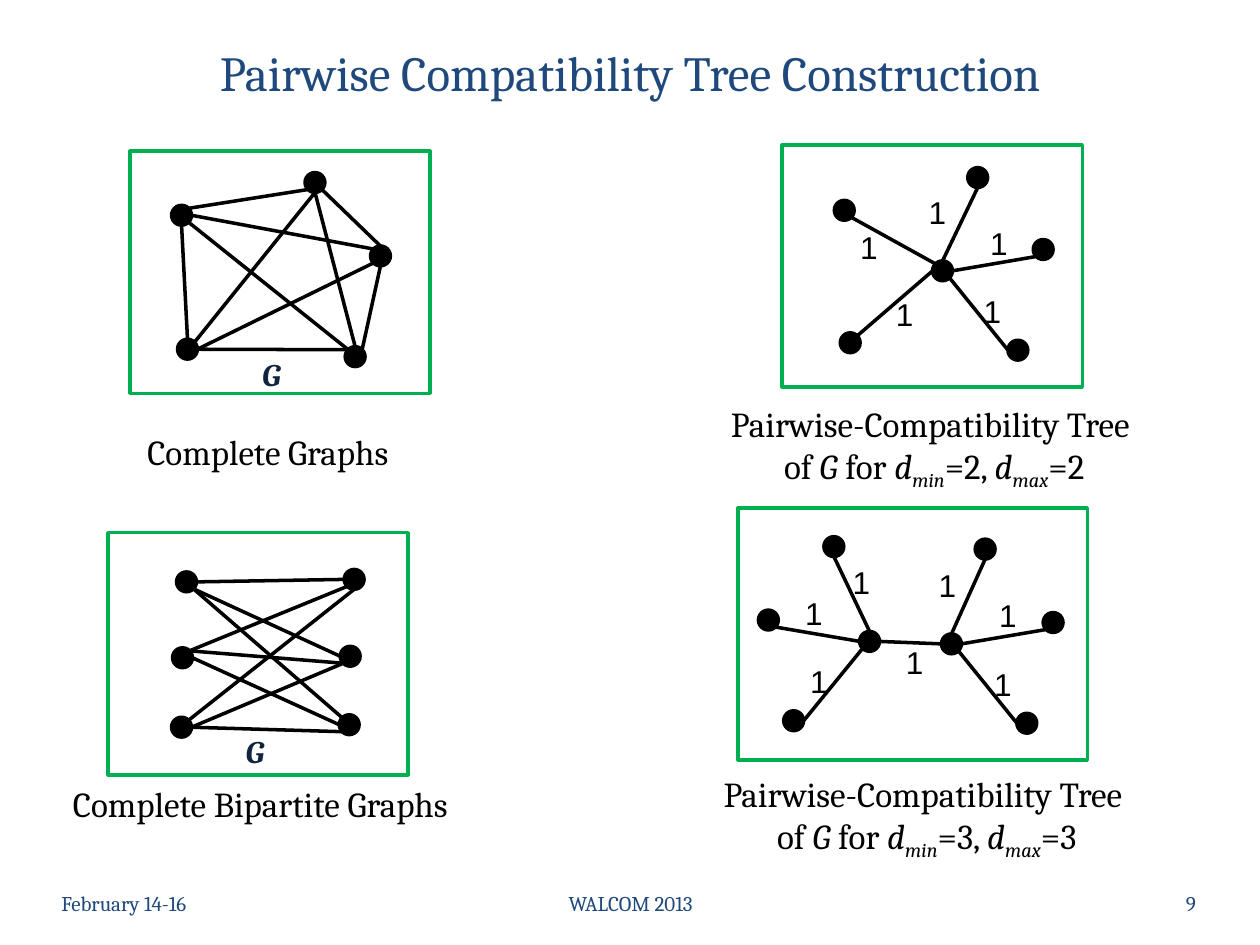
from lxml import etree
from pptx import Presentation
from pptx.dml.color import RGBColor
from pptx.enum.shapes import MSO_CONNECTOR, MSO_SHAPE
from pptx.enum.text import MSO_ANCHOR, MSO_AUTO_SIZE, PP_ALIGN
from pptx.oxml.ns import qn
from pptx.util import Cm, Pt

BLACK = RGBColor(0x00, 0x00, 0x00)
GREEN = RGBColor(0x00, 0xB0, 0x50)
BLUE = RGBColor(0x1F, 0x49, 0x7D)
NAVY = RGBColor(0x0F, 0x24, 0x3E)
OVAL, RECTANGLE = MSO_SHAPE.OVAL, MSO_SHAPE.RECTANGLE
STRAIGHT = MSO_CONNECTOR.STRAIGHT
LEFT, CENTER, RIGHT = PP_ALIGN.LEFT, PP_ALIGN.CENTER, PP_ALIGN.RIGHT
TOP, MIDDLE = MSO_ANCHOR.TOP, MSO_ANCHOR.MIDDLE
GROW = MSO_AUTO_SIZE.SHAPE_TO_FIT_TEXT

TITLE = {"name": "Cambria", "size": Pt(28), "color": BLUE}
FOOTER = {**TITLE, "size": Pt(12)}
CAPTION = {"name": "Cambria", "size": Pt(20), "color": BLACK}
WEIGHT = {"name": "Arial", "size": Pt(18), "color": BLACK}
GRAPH_NAME = {"name": "Cambria", "size": Pt(18), "color": NAVY, "bold": True, "italic": True}
ITALIC = {"italic": True}
SUBSCRIPT = {"italic": True, "baseline": "-25000"}

LINE_WIDTH = Pt(2)
RADIUS = 0.2
DIAGONAL = 0.14
SITES = {
    "N": (0, -RADIUS), "S": (0, RADIUS), "W": (-RADIUS, 0), "E": (RADIUS, 0),
    "NW": (-DIAGONAL, -DIAGONAL), "NE": (DIAGONAL, -DIAGONAL),
    "SW": (-DIAGONAL, DIAGONAL), "SE": (DIAGONAL, DIAGONAL),
}

# Each edge names its two nodes and the compass point where it meets each.
COMPLETE_GRAPH = {
    "frame": (2.62, 3.05, 6.05, 4.88),
    "nodes": {"top": (6.35, 3.68), "right": (7.67, 5.16), "left": (3.66, 4.34),
              "low_right": (7.16, 7.19), "low_left": (3.78, 7.04)},
    "edges": ["left SE low_right NW", "top SW left NE", "right SW low_left E",
              "top S low_left NE", "low_right NW low_left E", "left S low_left N",
              "top SE right N", "top S low_right N", "right S low_right NE",
              "left E right NW"],
    "weights": [],
}
STAR_TREE = {
    "frame": (15.77, 2.92, 6.05, 4.88),
    "nodes": {"hub": (19.0, 5.46), "top": (19.71, 3.58), "right": (21.03, 5.03),
              "left": (17.02, 4.24), "low_right": (20.52, 7.06),
              "low_left": (17.14, 6.91)},
    "edges": ["left SE hub NW", "low_left NE hub W", "low_right W hub SE",
              "hub N top S", "hub E right SW"],
    "weights": [(17.09, 4.47), (18.47, 3.76), (19.71, 4.39), (19.58, 5.77),
                (17.81, 5.82)],
}
DOUBLE_STAR_TREE = {
    "frame": (14.88, 10.24, 7.04, 5.08),
    "nodes": {"hub_right": (19.18, 12.98), "top_right": (19.86, 11.07),
              "right": (21.23, 12.55), "low_right": (20.7, 14.58),
              "hub_left": (17.53, 12.93), "top_left": (16.81, 11.02),
              "left": (15.49, 12.5), "low_left": (16.0, 14.53)},
    "edges": ["low_right W hub_right SE", "hub_right N top_right S",
              "hub_right E right SW", "low_left E hub_left SW",
              "hub_left N top_left S", "hub_left W left SE",
              "hub_left E hub_right W"],
    "weights": [(18.67, 11.28), (19.89, 11.89), (19.79, 13.28), (16.94, 11.23),
                (15.98, 11.86), (16.08, 13.23), (18.01, 12.83)],
}
BIPARTITE_GRAPH = {
    "frame": (2.18, 10.74, 6.05, 4.88),
    "nodes": {"L1": (3.76, 11.73), "L2": (3.68, 13.26), "L3": (3.66, 14.66),
              "R1": (7.14, 11.68), "R2": (7.06, 13.23), "R3": (7.04, 14.61)},
    "edges": ["R1 W L1 E", "R1 SW L2 NE", "R1 S L3 NE", "R2 W L1 SE", "R3 NW L1 SE",
              "R2 SW L2 NE", "R3 W L2 E", "R3 SW L3 E", "R2 SW L3 E"],
    "weights": [],
}


def format_run(run, style):
    for name, value in style.items():
        if name == "color":
            run.font.color.rgb = value
        elif name == "baseline":
            run._r.get_or_add_rPr().set("baseline", value)
        else:
            setattr(run.font, name, value)


def add_text(slide, box, lines, style, align=LEFT, anchor=MIDDLE, wrap=True):
    """Add a text box; each line is a list of (text, extra style) runs."""
    shape = slide.shapes.add_textbox(*map(Cm, box))
    frame = shape.text_frame
    frame.word_wrap = wrap
    frame.vertical_anchor = anchor
    if not wrap:
        frame.auto_size = GROW
    for index, line in enumerate(lines):
        paragraph = frame.add_paragraph() if index else frame.paragraphs[0]
        paragraph.alignment = align
        for text, extra in line:
            run = paragraph.add_run()
            run.text = text
            format_run(run, {**style, **extra})


def add_label(slide, box, text, style, **layout):
    add_text(slide, box, [[(text, {})]], style, **layout)


def add_outlined(slide, kind, box, line_color):
    shape = slide.shapes.add_shape(kind, *map(Cm, box))
    shape.shadow.inherit = False
    shape.fill.background()
    shape.line.color.rgb = line_color
    shape.line.width = LINE_WIDTH
    return shape


def add_node(slide, x, y):
    node = add_outlined(slide, OVAL, (x - RADIUS, y - RADIUS, 2 * RADIUS, 2 * RADIUS), BLACK)
    node.fill.solid()
    node.fill.fore_color.rgb = BLACK


def add_edge(slide, nodes, edge):
    first, first_site, second, second_site = edge.split()
    ends = [Cm(centre + offset)
            for node, site in ((first, first_site), (second, second_site))
            for centre, offset in zip(nodes[node], SITES[site])]
    connector = slide.shapes.add_connector(STRAIGHT, *ends)
    connector.line.color.rgb = BLACK
    connector.line.width = LINE_WIDTH
    etree.SubElement(connector._element.spPr, qn("a:effectLst"))


def add_graph(slide, graph):
    add_outlined(slide, RECTANGLE, graph["frame"], GREEN)
    for centre in graph["nodes"].values():
        add_node(slide, *centre)
    for edge in graph["edges"]:
        add_edge(slide, graph["nodes"], edge)
    for left, top in graph["weights"]:
        add_label(slide, (left, top, 0.84, 1.02), "1", WEIGHT, anchor=TOP, wrap=False)


def add_tree_caption(slide, left, top, distance):
    lines = [
        [("Pairwise-Compatibility Tree ", {})],
        [("of ", {}), ("G", ITALIC), (" for ", {}),
         ("d", ITALIC), ("min", SUBSCRIPT), (f"={distance}, ", {}),
         ("d", ITALIC), ("max", SUBSCRIPT), (f"={distance}", {})],
    ]
    add_text(slide, (left, top, 9.63, 1.96), lines, CAPTION, CENTER, TOP, wrap=False)


def main():
    presentation = Presentation()
    presentation.slide_width, presentation.slide_height = Cm(25.4), Cm(19.05)
    slide = presentation.slides.add_slide(presentation.slide_layouts[6])

    add_label(slide, (0, 0, 25.4, 2.92), "Pairwise Compatibility Tree Construction",
              TITLE, align=CENTER)
    for left, width, text, align in ((0.99, 5.92, "February 14-16", LEFT),
                                     (8.69, 8.05, "WALCOM 2013", CENTER),
                                     (18.44, 5.92, "9", RIGHT)):
        add_label(slide, (left, 17.7, width, 1.02), text, FOOTER, align=align)

    for graph in (COMPLETE_GRAPH, STAR_TREE, DOUBLE_STAR_TREE, BIPARTITE_GRAPH):
        add_graph(slide, graph)
    for left, top in ((5.0, 7.14), (4.67, 14.73)):
        add_label(slide, (left, top, 0.94, 0.81), "G", GRAPH_NAME, align=CENTER)

    for box, text in (((2.72, 8.56, 6.1, 1.12), "Complete Graphs"),
                      ((1.22, 15.65, 8.99, 1.12), "Complete Bipartite Graphs")):
        add_label(slide, box, text, CAPTION, anchor=TOP, wrap=False)
    add_tree_caption(slide, 14.02, 7.98, 2)
    add_tree_caption(slide, 13.87, 15.44, 3)

    presentation.save("out.pptx")


if __name__ == "__main__":
    main()
